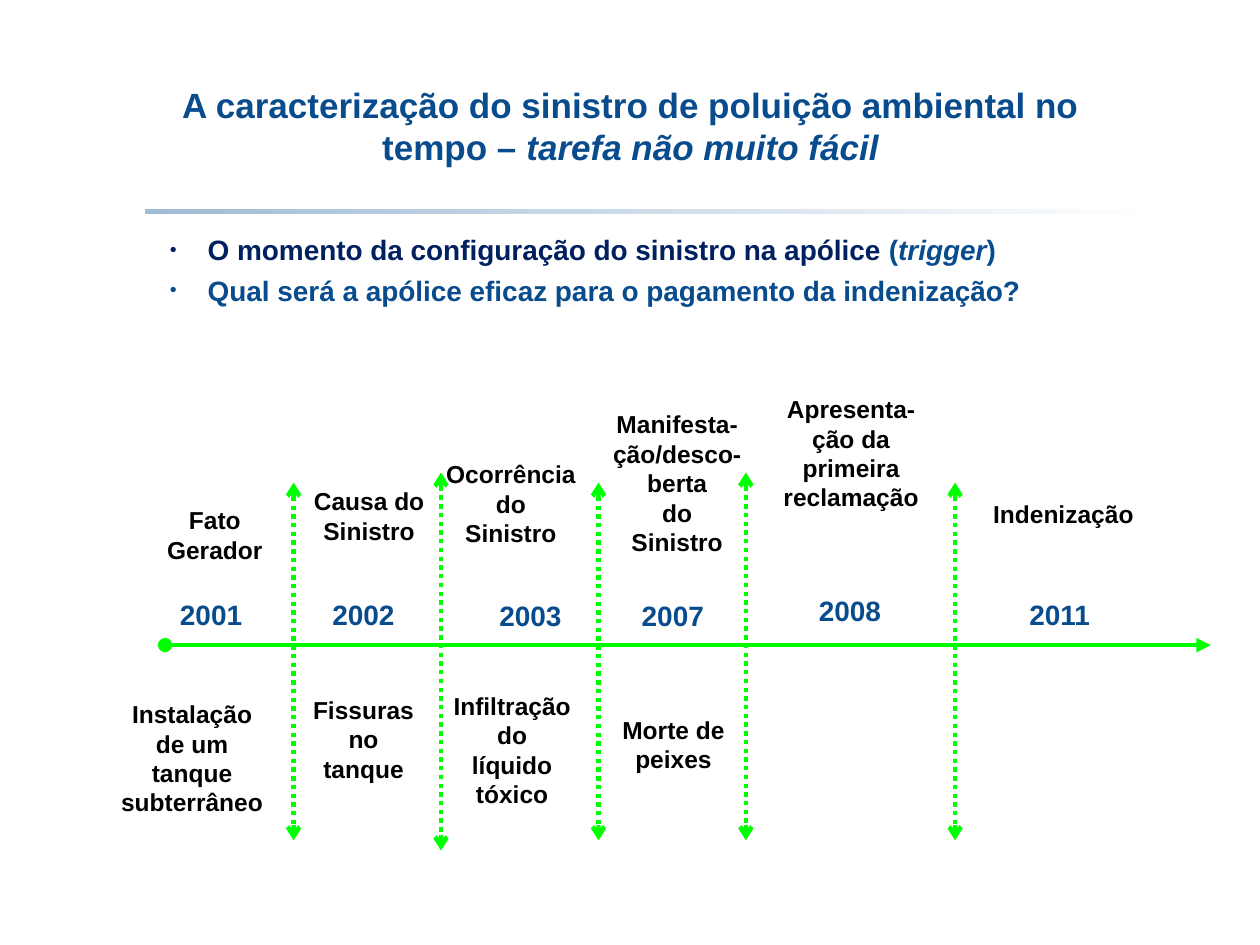
from lxml.etree import SubElement
from pptx import Presentation
from pptx.dml.color import RGBColor
from pptx.enum.dml import MSO_LINE_DASH_STYLE as Dash
from pptx.enum.shapes import MSO_CONNECTOR_TYPE as Connector, MSO_SHAPE as Shape
from pptx.enum.text import MSO_ANCHOR as Anchor, MSO_AUTO_SIZE as AutoSize, PP_ALIGN as Align
from pptx.oxml.ns import qn
from pptx.util import Emu, Pt

PX = 9144
BLUE, NAVY, GREEN, BLACK = "094C8D", "002060", "00FF00", "000000"


def px(*lengths):
    return [Emu(length * PX) for length in lengths]


def color(value):
    return RGBColor.from_string(value)


class TimelineSlide:
    font = "Arial"

    def __init__(self, deck):
        self.page = deck.slides.add_slide(deck.slide_layouts[5])
        self.shapes = self.page.shapes

    def style(self, para, size, ink, align=Align.CENTER):
        para.alignment = align
        font = para.font
        font.name, font.size, font.bold = self.font, Pt(size), True
        font.color.rgb = color(ink)

    def spans(self, para, parts):
        for text, ink, italic in parts:
            span = para.add_run()
            span.text = text
            if ink:
                span.font.color.rgb = color(ink)
            if italic:
                span.font.italic = True

    def title(self, area, parts):
        box = self.shapes.title
        box.left, box.top, box.width, box.height = px(*area)
        frame = box.text_frame
        frame.auto_size, frame.vertical_anchor = AutoSize.NONE, Anchor.MIDDLE
        para = frame.paragraphs[0]
        self.spans(para, parts)
        self.style(para, 20, BLUE)

    def rule(self, area, start, end):
        bar = self.shapes.add_shape(Shape.RECTANGLE, *px(*area))
        bar.shadow.inherit = False
        bar.line.fill.background()
        bar.fill.gradient()
        bar.fill.gradient_angle = 0
        for stop, shade in zip(bar.fill.gradient_stops, (start, end)):
            stop.color.rgb = color(shade)

    def bullets(self, area, items):
        frame = self.shapes.add_textbox(*px(*area)).text_frame
        frame.word_wrap = True
        for index, parts in enumerate(items):
            para = frame.add_paragraph() if index else frame.paragraphs[0]
            props = para._p.get_or_add_pPr()
            props.set("marL", str(30 * PX))
            props.set("indent", str(-30 * PX))
            para.space_after = Pt(4)
            SubElement(props, qn("a:buSzPct")).set("val", "70000")
            SubElement(props, qn("a:buFont")).set("typeface", self.font)
            SubElement(props, qn("a:buChar")).set("char", "•")
            self.spans(para, parts)
            self.style(para, 16, BLUE, Align.LEFT)

    def label(self, area, lines, size=14, ink=BLACK, anchor=Anchor.MIDDLE):
        frame = self.shapes.add_textbox(*px(*area)).text_frame
        frame.word_wrap = True
        frame.vertical_anchor = anchor
        frame.text = lines
        for para in frame.paragraphs:
            self.style(para, size, ink)

    def arrow(self, start, end, width, head, tail, dash=None):
        line = self.shapes.add_connector(Connector.STRAIGHT, *px(*start, *end))
        line.line.color.rgb = color(GREEN)
        line.line.width = Pt(width)
        if dash:
            line.line.dash_style = dash
        outline = line.line._get_or_add_ln()
        SubElement(outline, qn("a:headEnd")).set("type", head)
        SubElement(outline, qn("a:tailEnd")).set("type", tail)
        SubElement(line._element.spPr, qn("a:effectLst"))


def main():
    deck = Presentation()
    deck.slide_width, deck.slide_height = px(1000, 750)
    slide = TimelineSlide(deck)

    slide.rule((115, 166, 807, 4), "A0BBD4", "FFFFFF")
    slide.title((92, 42, 817, 115), [
        ("A caracterização do sinistro de poluição ambiental no tempo – ", None, False),
        ("tarefa não muito fácil", None, True),
    ])
    slide.bullets((125, 180, 793, 264), [
        [("O momento da configuração do sinistro na apólice ", NAVY, False),
         ("(", None, False), ("trigger", None, True), (")", None, False)],
        [("Qual será a apólice eficaz para o pagamento da indenização?", None, False)],
    ])

    slide.arrow((131, 512), (961, 512), 2.75, "oval", "triangle")
    for x, top, bottom in [(233, 383, 667), (350, 375, 675), (475, 383, 667),
                           (592, 375, 667), (758, 383, 667)]:
        slide.arrow((x, top), (x, bottom), 2.5, "arrow", "arrow", Dash.ROUND_DOT)

    for year, left, top, width in [("2001", 125, 469, 85), ("2002", 231, 469, 115),
                                   ("2003", 373, 470, 96), ("2007", 461, 470, 146),
                                   ("2008", 617, 466, 115), ("2011", 789, 469, 104)]:
        slide.label((left, top, width, 37), year, 16, BLUE)

    for lines, area in [
        ("Fato Gerador", (117, 396, 107, 57)),
        ("Causa do Sinistro", (233, 381, 120, 57)),
        ("Ocorrência do\nSinistro", (344, 359, 123, 81)),
        ("Indenização", (748, 391, 192, 33)),
        ("Fissuras no tanque", (234, 546, 109, 81)),
        ("Infiltração do\nlíquido tóxico", (336, 543, 141, 104)),
        ("Morte de peixes", (477, 562, 115, 57)),
    ]:
        slide.label(area, lines)

    for lines, area in [
        ("Manifesta-ção/desco-berta\ndo\nSinistro", (466, 320, 143, 128)),
        ("Apresenta-ção da primeira reclamação", (609, 308, 133, 104)),
        ("Instalação\nde um\ntanque subterrâneo", (86, 550, 133, 104)),
    ]:
        slide.label(area, lines, anchor=Anchor.TOP)

    deck.save("out.pptx")


if __name__ == "__main__":
    main()
